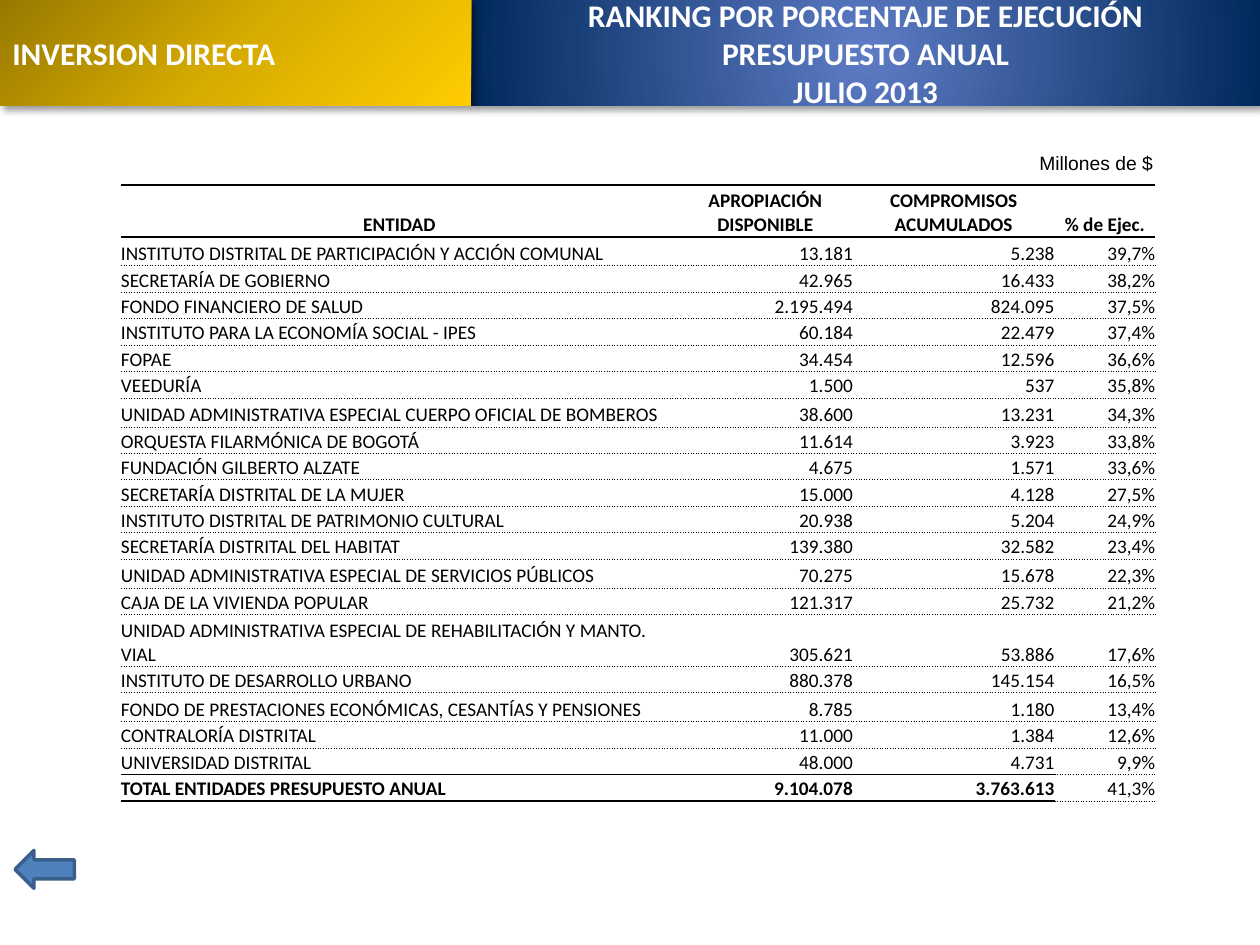
from lxml.etree import SubElement
from pptx import Presentation
from pptx.dml.color import RGBColor
from pptx.enum.shapes import MSO_SHAPE
from pptx.enum.text import MSO_ANCHOR, MSO_AUTO_SIZE, PP_ALIGN
from pptx.oxml import parse_xml
from pptx.oxml.ns import nsdecls, qn
from pptx.util import Inches, Pt

THEME = {
    "white": "FFFFFF", "black": "000000", "arrow": "4F81BD", "edge": "3A5F8C",
    "blue": [(0, "5E7CC5"), (100, "00295C")],
    "gold": [(0, "977900"), (50, "D7AC00"), (100, "FFCC00")],
    "title": Pt(18), "body": Pt(11), "font": "Calibri", "plain": "Arial",
}
WIDE, HIGH = Inches(10), Inches(7.5)
BAND = 0.112
SPLIT = 0.374


def place(x, y, w, h):
    """Turn shares of the slide into lengths."""
    return [round(n) for n in (x * WIDE, y * HIGH, w * WIDE, h * HIGH)]


def write(frame, lines, align, color, **style):
    for i, line in enumerate(lines):
        para = frame.paragraphs[0] if i == 0 else frame.add_paragraph()
        para.alignment = align
        run = para.add_run()
        run.text = line
        run.font.color.rgb = RGBColor.from_string(color)
        for name, value in style.items():
            setattr(run.font, name, value)


deck = Presentation()
deck.slide_width, deck.slide_height = WIDE, HIGH
slide = deck.slides.add_slide(deck.slide_layouts[6])
shapes = slide.shapes

# Heading bands
bands = [
    (SPLIT, 1 - SPLIT, "blue", (50, 50, 50, 50), PP_ALIGN.CENTER,
     ["RANKING POR PORCENTAJE DE EJECUCIÓN", "PRESUPUESTO ANUAL", "JULIO 2013"]),
    (0, SPLIT, "gold", (0, 0, 100, 100), PP_ALIGN.LEFT, ["INVERSION DIRECTA"]),
]
for left, width, tone, focus, align, lines in bands:
    band = shapes.add_shape(MSO_SHAPE.RECTANGLE, *place(left, 0, width, BAND))
    stops = "".join(
        f'<a:gs pos="{pos * 1000}"><a:srgbClr val="{color}"/></a:gs>'
        for pos, color in THEME[tone])
    edges = " ".join(f'{side}="{n * 1000}"' for side, n in zip("ltrb", focus))
    props = band._element.spPr
    props.append(parse_xml(
        f'<a:gradFill {nsdecls("a")} rotWithShape="1"><a:gsLst>{stops}</a:gsLst>'
        f'<a:path path="circle"><a:fillToRect {edges}/></a:path></a:gradFill>'))
    band.line.fill.background()
    props.append(parse_xml(
        f'<a:effectLst {nsdecls("a")}><a:outerShdw blurRad="{Pt(4)}" '
        f'dist="{Pt(3)}" dir="2700000" algn="tl" rotWithShape="0">'
        f'<a:srgbClr val="{THEME["black"]}"><a:alpha val="40000"/></a:srgbClr>'
        '</a:outerShdw></a:effectLst>'))
    band.text_frame.vertical_anchor = MSO_ANCHOR.MIDDLE
    write(band.text_frame, lines, align, THEME["white"],
          size=THEME["title"], name=THEME["font"], bold=True)

# Back arrow
arrow = shapes.add_shape(MSO_SHAPE.LEFT_ARROW, *place(0.012, 0.9, 0.047, 0.04))
arrow.shadow.inherit = False
arrow.fill.solid()
arrow.fill.fore_color.rgb = RGBColor.from_string(THEME["arrow"])
arrow.line.color.rgb = RGBColor.from_string(THEME["edge"])
arrow.line.width = Pt(2)

# Unit note
note = shapes.add_textbox(*place(0.815, 0.153, 0.111, 0.038)).text_frame
note.word_wrap = False
note.auto_size = MSO_AUTO_SIZE.SHAPE_TO_FIT_TEXT
write(note, ["Millones de $"], PP_ALIGN.LEFT, THEME["black"],
      size=THEME["body"], name=THEME["plain"])

# Ranking table
rows = [
    ("ENTIDAD", "APROPIACIÓN DISPONIBLE", "COMPROMISOS ACUMULADOS", "% de Ejec."),
    ("INSTITUTO DISTRITAL DE PARTICIPACIÓN Y ACCIÓN COMUNAL", "13.181", "5.238", "39,7%"),
    ("SECRETARÍA DE GOBIERNO", "42.965", "16.433", "38,2%"),
    ("FONDO FINANCIERO DE SALUD", "2.195.494", "824.095", "37,5%"),
    ("INSTITUTO PARA LA ECONOMÍA SOCIAL - IPES", "60.184", "22.479", "37,4%"),
    ("FOPAE", "34.454", "12.596", "36,6%"),
    ("VEEDURÍA", "1.500", "537", "35,8%"),
    ("UNIDAD ADMINISTRATIVA ESPECIAL CUERPO OFICIAL DE BOMBEROS", "38.600", "13.231", "34,3%"),
    ("ORQUESTA FILARMÓNICA DE BOGOTÁ", "11.614", "3.923", "33,8%"),
    ("FUNDACIÓN GILBERTO ALZATE", "4.675", "1.571", "33,6%"),
    ("SECRETARÍA DISTRITAL DE LA MUJER", "15.000", "4.128", "27,5%"),
    ("INSTITUTO DISTRITAL DE PATRIMONIO CULTURAL", "20.938", "5.204", "24,9%"),
    ("SECRETARÍA DISTRITAL DEL HABITAT", "139.380", "32.582", "23,4%"),
    ("UNIDAD ADMINISTRATIVA ESPECIAL DE SERVICIOS PÚBLICOS", "70.275", "15.678", "22,3%"),
    ("CAJA DE LA VIVIENDA POPULAR", "121.317", "25.732", "21,2%"),
    ("UNIDAD ADMINISTRATIVA ESPECIAL DE REHABILITACIÓN Y MANTO. VIAL",
     "305.621", "53.886", "17,6%"),
    ("INSTITUTO DE DESARROLLO URBANO", "880.378", "145.154", "16,5%"),
    ("FONDO DE PRESTACIONES ECONÓMICAS, CESANTÍAS Y PENSIONES", "8.785", "1.180", "13,4%"),
    ("CONTRALORÍA DISTRITAL", "11.000", "1.384", "12,6%"),
    ("UNIVERSIDAD DISTRITAL", "48.000", "4.731", "9,9%"),
    ("TOTAL ENTIDADES PRESUPUESTO ANUAL", "9.104.078", "3.763.613", "41,3%"),
]
widths = [4.42, 1.39, 1.6, 0.8]
tall = {0: 0.41, 15: 0.41, 1: 0.23, 7: 0.23, 13: 0.23, 17: 0.23}
last = len(rows) - 1
table = shapes.add_table(len(rows), len(widths),
                         *place(0.096, 0.196, 0.821, 0.65)).table
table.first_row = table.horz_banding = False
table._tbl.tblPr.find(qn("a:tableStyleId")).text = "{2D5ABB26-0587-4C30-8999-92F81FD0307C}"
for col, width in zip(table.columns, widths):
    col.width = Inches(width)

inset = dict.fromkeys(
    ["margin_left", "margin_right", "margin_top", "margin_bottom"], 0)
form = {**inset, "vertical_anchor": MSO_ANCHOR.BOTTOM}
dots, thin, thick = (0.5, "dot"), (1, "solid"), (1.5, "solid")
for r, row in enumerate(rows):
    table.rows[r].height = Inches(tall.get(r, 0.21))
    for c, text in enumerate(row):
        cell = table.cell(r, c)
        for name, value in form.items():
            setattr(cell, name, value)
        align = (PP_ALIGN.CENTER if r == 0 else
                 PP_ALIGN.LEFT if c == 0 else PP_ALIGN.RIGHT)
        write(cell.text_frame, [text], align, THEME["black"],
              size=THEME["body"], name=THEME["font"],
              bold=r == 0 or (r == last and c < 3))
        # Each rule is shared by the row above and the row below it
        rules = [thick if n == 0 else
                 thin if n == 1 or (n >= last and c < 3) else dots
                 for n in (r, r + 1)]
        props = cell._tc.get_or_add_tcPr()
        for side, (size, dash) in zip(("a:lnT", "a:lnB"), rules):
            line = SubElement(props, qn(side), w=str(Pt(size)))
            fill = SubElement(line, qn("a:solidFill"))
            SubElement(fill, qn("a:srgbClr"), val=THEME["black"])
            SubElement(line, qn("a:prstDash"), val=dash)
        cell.fill.solid()
        cell.fill.fore_color.rgb = RGBColor.from_string(THEME["white"])

deck.save("out.pptx")
